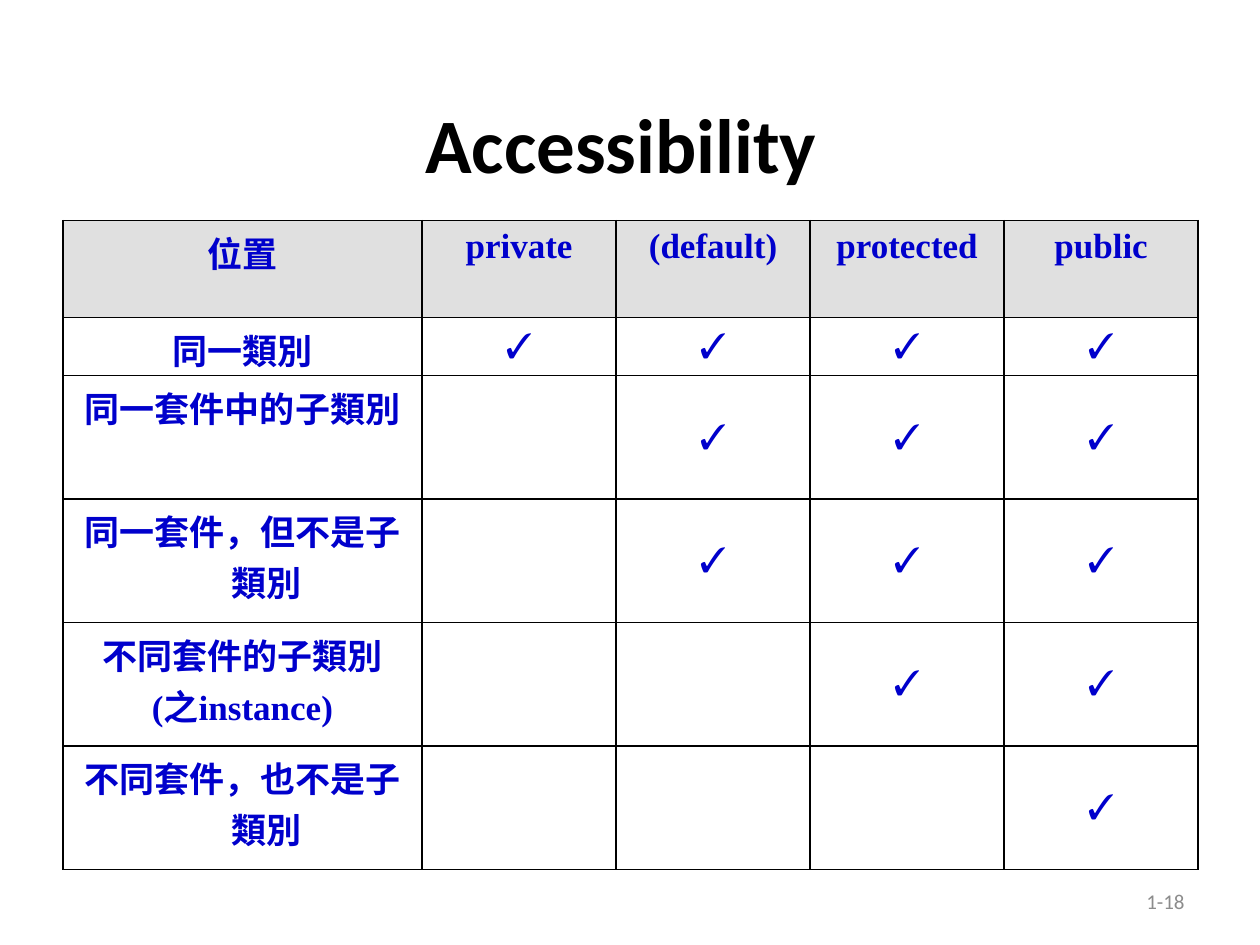
from pptx import Presentation
from pptx.dml.color import RGBColor
from pptx.enum.text import MSO_ANCHOR as Anchor, PP_ALIGN as Align
from pptx.oxml import parse_xml
from pptx.oxml.ns import nsdecls
from pptx.util import Inches, Pt

COLORS = {"title": "000000", "text": "0000CC", "header": "E0E0E0",
          "border": "000000", "number": "8C8C8C"}
TITLE = "Accessibility "
PAGE_NUMBER = "1-18"
HEADERS = ["位置", "private", "(default)", "protected", "public"]
LOCATIONS = [
    ("同一類別", ["private", "(default)", "protected", "public"]),
    ("同一套件中的子類別", ["(default)", "protected", "public"]),
    ("同一套件，但不是子類別", ["(default)", "protected", "public"]),
    ("不同套件的子類別\n(之instance)", ["protected", "public"]),
    ("不同套件，也不是子類別", ["public"]),
]
COLUMN_WIDTHS = [2.85] + [1.54] * 4
ROW_HEIGHTS = [0.77, 0.46] + [0.98] * 4


def write(frame, text, size, color, font="Calibri", bold=False,
          align=Align.CENTER, anchor=Anchor.TOP, hanging=0):
    """Fill a text frame with one paragraph per line of text."""
    frame.word_wrap = True
    frame.vertical_anchor = anchor
    for i, line in enumerate(text.split("\n")):
        paragraph = frame.add_paragraph() if i else frame.paragraphs[0]
        paragraph.alignment = align
        if hanging:
            properties = paragraph._p.get_or_add_pPr()
            properties.set("marL", str(Inches(hanging)))
            properties.set("indent", str(-Inches(hanging)))
        run = paragraph.add_run()
        run.text = line
        run.font.size = Pt(size)
        run.font.name = font
        run.font.bold = bold
        run.font.color.rgb = RGBColor.from_string(COLORS[color])


def add_borders(cell):
    """Draw a thin line on all four sides of a cell."""
    properties = cell._tc.get_or_add_tcPr()
    for i, side in enumerate("LRTB"):
        properties.insert(i, parse_xml(
            f'<a:ln{side} {nsdecls("a")} w="{Pt(1)}"><a:solidFill>'
            f'<a:srgbClr val="{COLORS["border"]}"/></a:solidFill></a:ln{side}>'))


def add_access_table(slide):
    """Build the table of locations against access levels."""
    rows = [HEADERS] + [
        [location] + ["✓" if level in allowed else "" for level in HEADERS[1:]]
        for location, allowed in LOCATIONS]
    table = slide.shapes.add_table(
        len(rows), len(HEADERS), Inches(0.5), Inches(1.75),
        Inches(sum(COLUMN_WIDTHS)), Inches(sum(ROW_HEIGHTS))).table
    table.horz_banding = False
    for column, width in zip(table.columns, COLUMN_WIDTHS):
        column.width = Inches(width)
    for r, (row, height) in enumerate(zip(rows, ROW_HEIGHTS)):
        table.rows[r].height = Inches(height)
        for c, text in enumerate(row):
            cell = table.cell(r, c)
            if r == 0:
                cell.fill.solid()
                cell.fill.fore_color.rgb = RGBColor.from_string(COLORS["header"])
            else:
                cell.fill.background()
            add_borders(cell)
            if text:
                write(cell.text_frame, text, 20, "text", font="Times New Roman",
                      bold=True, hanging=0.38)
                cell.vertical_anchor = Anchor.MIDDLE if text == "✓" else Anchor.TOP


def main():
    """Build and save the slide."""
    deck = Presentation()
    deck.slide_width, deck.slide_height = Inches(10), Inches(7.5)
    slide = deck.slides.add_slide(deck.slide_layouts[6])
    title = slide.shapes.add_textbox(Inches(0.5), Inches(0.3), Inches(9), Inches(1.25))
    write(title.text_frame, TITLE, 44, "title", bold=True, anchor=Anchor.BOTTOM)
    add_access_table(slide)
    number = slide.shapes.add_textbox(Inches(7.17), Inches(6.95), Inches(2.33), Inches(0.4))
    write(number.text_frame, PAGE_NUMBER, 12, "number", align=Align.RIGHT,
          anchor=Anchor.MIDDLE)
    deck.save("out.pptx")


if __name__ == "__main__":
    main()
